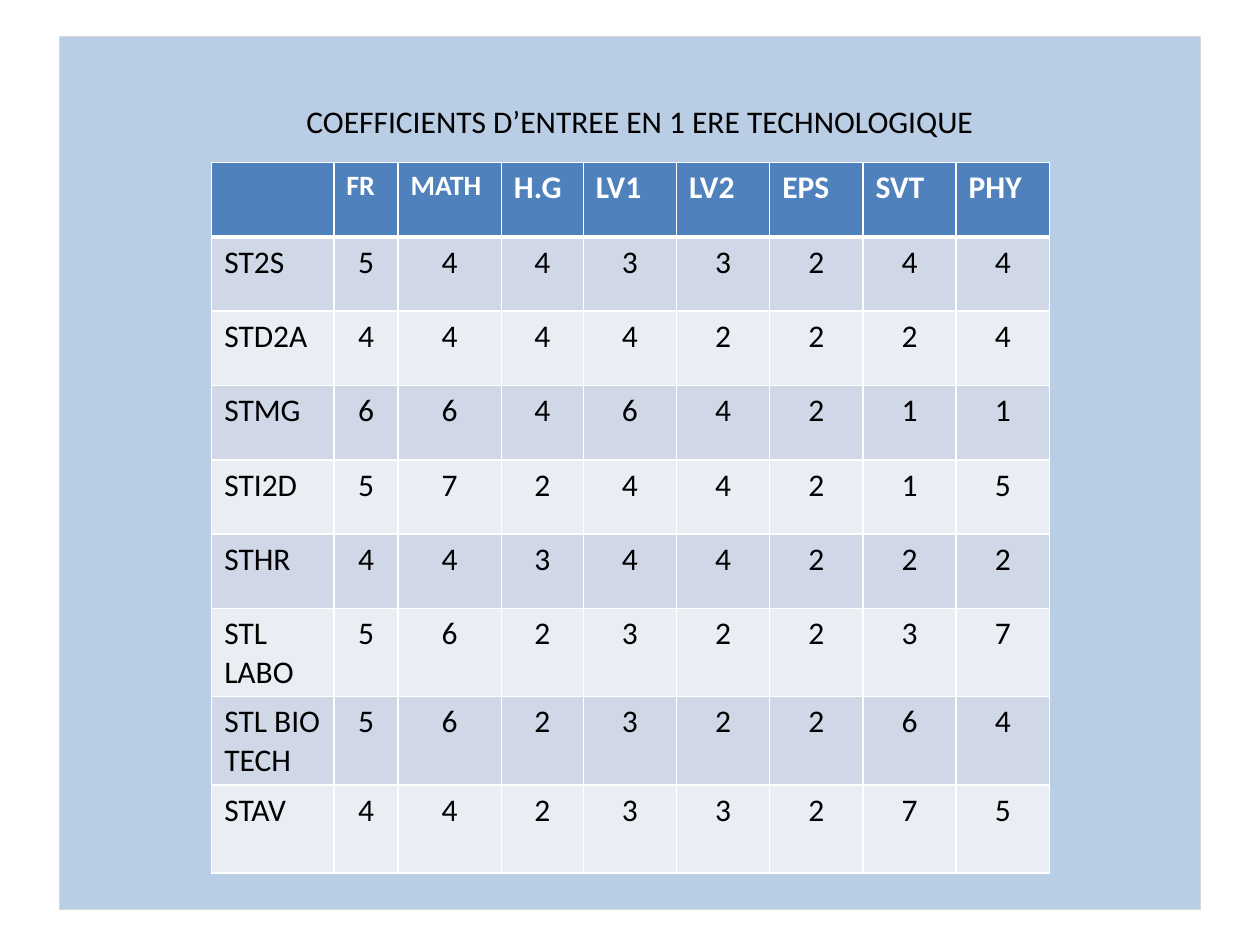
from lxml import etree
from pptx import Presentation
from pptx.dml.color import RGBColor
from pptx.enum.shapes import MSO_SHAPE
from pptx.enum.text import MSO_AUTO_SIZE, PP_ALIGN
from pptx.oxml.ns import qn
from pptx.util import Inches, Pt

RECTANGLE = MSO_SHAPE.RECTANGLE
FIT_SHAPE = MSO_AUTO_SIZE.SHAPE_TO_FIT_TEXT
LEFT, CENTER = PP_ALIGN.LEFT, PP_ALIGN.CENTER

COLORS = {
    "panel": "B9CDE5",
    "panel_line": "D9D9D9",
    "header": "4F81BD",
    "odd_row": "D0D8E8",
    "even_row": "E9EDF4",
    "white": "FFFFFF",
    "black": "000000",
}
SUBJECTS = ["", "FR", "MATH", "H.G", "LV1", "LV2", "EPS", "SVT", "PHY"]
COEFFICIENTS = {
    "ST2S": [5, 4, 4, 3, 3, 2, 4, 4],
    "STD2A": [4, 4, 4, 4, 2, 2, 2, 4],
    "STMG": [6, 6, 4, 6, 4, 2, 1, 1],
    "STI2D": [5, 7, 2, 4, 4, 2, 1, 5],
    "STHR": [4, 4, 3, 4, 4, 2, 2, 2],
    "STL LABO": [5, 6, 2, 3, 2, 2, 3, 7],
    "STL BIO TECH": [5, 6, 2, 3, 2, 2, 6, 4],
    "STAV": [4, 4, 2, 3, 3, 2, 7, 5],
}
COLUMN_WIDTHS = [0.97, 0.51, 0.82, 0.65] + [0.74] * 5
ROW_HEIGHTS = [0.59] * 6 + [0.7] * 3
SMALL_SUBJECTS = {"FR", "MATH"}


def rgb(name):
    return RGBColor.from_string(COLORS[name])


def write_text(frame, text, size=18, color="black", bold=False, align=LEFT, font="Calibri"):
    para = frame.paragraphs[0]
    para.alignment = align
    if text:
        span = para.add_run()
        span.text = text
        span.font.name = font
        span.font.size = Pt(size)
        span.font.bold = bold
        span.font.color.rgb = rgb(color)


class SlideBuilder:
    """Draws styled elements on the current slide."""

    def __init__(self, slide):
        self.slide = slide

    def panel(self, left, top, width, height):
        box = self.slide.shapes.add_shape(
            RECTANGLE, Inches(left), Inches(top), Inches(width), Inches(height))
        box.shadow.inherit = False
        box.fill.solid()
        box.fill.fore_color.rgb = rgb("panel")
        box.line.color.rgb = rgb("panel_line")
        box.line.width = Pt(0.75)

    def title(self, text, left, top, width, height):
        box = self.slide.shapes.add_textbox(
            Inches(left), Inches(top), Inches(width), Inches(height))
        box.text_frame.word_wrap = True
        box.text_frame.auto_size = FIT_SHAPE
        write_text(box.text_frame, text, align=CENTER)

    def border(self, cell, side, width):
        properties = cell._tc.get_or_add_tcPr()
        line = etree.SubElement(properties, qn(f"a:ln{side}"), w=str(Pt(width)))
        fill = etree.SubElement(line, qn("a:solidFill"))
        etree.SubElement(fill, qn("a:srgbClr"), val=COLORS["white"])

    def cell(self, cell, text, fill, top=1, bottom=1, **text_format):
        write_text(cell.text_frame, text, **text_format)
        for side, width in {"L": 1, "R": 1, "T": top, "B": bottom}.items():
            self.border(cell, side, width)
        cell.fill.solid()
        cell.fill.fore_color.rgb = rgb(fill)

    def table(self, left, top):
        table = self.slide.shapes.add_table(
            len(ROW_HEIGHTS), len(COLUMN_WIDTHS), Inches(left), Inches(top),
            Inches(sum(COLUMN_WIDTHS)), Inches(sum(ROW_HEIGHTS))).table
        for column, width in zip(table.columns, COLUMN_WIDTHS):
            column.width = Inches(width)
        for row, height in zip(table.rows, ROW_HEIGHTS):
            row.height = Inches(height)
        for column, subject in enumerate(SUBJECTS):
            size = 16 if subject in SMALL_SUBJECTS else 18
            self.cell(table.cell(0, column), subject, "header", bottom=3,
                      size=size, color="white", bold=True)
        for row, (track, values) in enumerate(COEFFICIENTS.items(), start=1):
            fill = "odd_row" if row % 2 else "even_row"
            for column, value in enumerate([track, *values]):
                self.cell(table.cell(row, column), str(value), fill,
                          top=3 if row == 1 else 1, align=CENTER if column else LEFT)


def main():
    deck = Presentation()
    deck.slide_width, deck.slide_height = Inches(10), Inches(7.5)
    page = SlideBuilder(deck.slides.add_slide(deck.slide_layouts[6]))
    page.panel(0.47, 0.29, 9.06, 6.93)
    page.title("COEFFICIENTS D’ENTREE EN 1 ERE TECHNOLOGIQUE", 1.46, 0.76, 7.24, 0.4)
    page.table(1.68, 1.29)
    deck.save("out.pptx")


if __name__ == "__main__":
    main()
